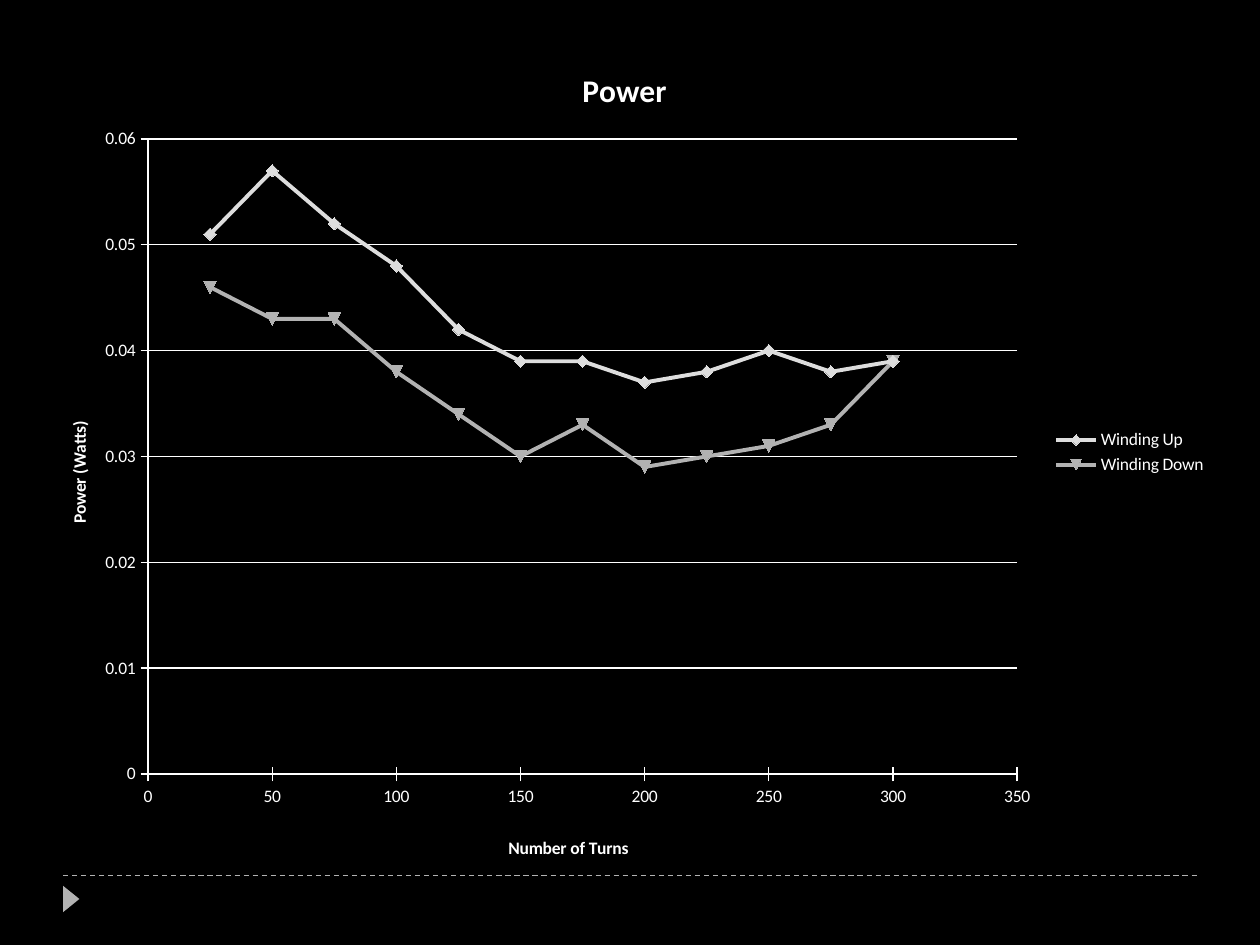
from lxml import etree
from pptx import Presentation
from pptx.chart.data import XyChartData
from pptx.dml.color import RGBColor
from pptx.enum.chart import XL_CHART_TYPE, XL_LEGEND_POSITION, XL_TICK_MARK
from pptx.enum.dml import MSO_LINE
from pptx.enum.shapes import MSO_CONNECTOR, MSO_SHAPE
from pptx.oxml.ns import qn
from pptx.util import Inches, Pt

SCATTER = XL_CHART_TYPE.XY_SCATTER_SMOOTH
LEGEND_RIGHT = XL_LEGEND_POSITION.RIGHT
TICK_CROSS = XL_TICK_MARK.CROSS
TICK_NONE = XL_TICK_MARK.NONE
BLACK = RGBColor(0x00, 0x00, 0x00)
WHITE = RGBColor(0xFF, 0xFF, 0xFF)
LIGHT_GREY = RGBColor(0xDD, 0xDD, 0xDD)
GREY = RGBColor(0xB2, 0xB2, 0xB2)
FONT = "Calibri"

TURNS = range(25, 301, 25)
POWER = {
    "Winding Up": (LIGHT_GREY, [0.051, 0.057, 0.052, 0.048, 0.042, 0.039,
                                0.039, 0.037, 0.038, 0.04, 0.038, 0.039]),
    "Winding Down": (GREY, [0.046, 0.043, 0.043, 0.038, 0.034, 0.03,
                            0.033, 0.029, 0.03, 0.031, 0.033, 0.039]),
}


def set_layout(element, position, **fractions):
    """Place a chart part by fractions of the chart's size."""
    for old in element.findall(qn("c:layout")):
        element.remove(old)
    layout = etree.Element(qn("c:layout"))
    manual = etree.SubElement(layout, qn("c:manualLayout"))
    if "w" in fractions:
        etree.SubElement(manual, qn("c:layoutTarget")).set("val", "inner")
    for side in ("xMode", "yMode"):
        etree.SubElement(manual, qn("c:" + side)).set("val", "edge")
    for name, value in fractions.items():
        etree.SubElement(manual, qn("c:" + name)).set("val", str(value))
    element.insert(position, layout)


def set_title(owner, text, size, x, y):
    """Title a chart or an axis."""
    title = owner.chart_title if hasattr(owner, "chart_title") else owner.axis_title
    title.text_frame.text = text
    font = title.text_frame.paragraphs[0].runs[0].font
    font.name, font.size, font.bold = FONT, Pt(size), True
    font.color.rgb = WHITE
    set_layout(title._element, 1, x=x, y=y)


def style_line(line, color, width):
    line.color.rgb = color
    line.width = Pt(width)


def style_axis(axis, maximum, step, number_format):
    axis.minimum_scale, axis.maximum_scale = 0, maximum
    axis.major_unit = step
    axis.major_tick_mark, axis.minor_tick_mark = TICK_CROSS, TICK_NONE
    axis.tick_labels.number_format = number_format
    axis.tick_labels.number_format_is_linked = False
    style_line(axis.format.line, WHITE, 0.75)


def style_series(series, color, index):
    # The index picks the automatic marker symbol
    series._element.find(qn("c:idx")).set("val", str(index))
    series.smooth = True
    style_line(series.format.line, color, 2.25)
    series.marker.size = 7
    series.marker.format.fill.solid()
    series.marker.format.fill.fore_color.rgb = color
    style_line(series.marker.format.line, color, 0.75)


def add_power_chart(slide):
    data = XyChartData()
    for name, (_, values) in POWER.items():
        series_data = data.add_series(name)
        for turns, power in zip(TURNS, values):
            series_data.add_data_point(turns, power)
    chart = slide.shapes.add_chart(SCATTER, Inches(0.23), Inches(0.23),
                                   Inches(9.45), Inches(6.72), data).chart
    chart.font.name, chart.font.size = FONT, Pt(10)
    chart.font.color.rgb = WHITE

    # Axes and gridlines
    style_axis(chart.category_axis, 350, 50, "General")
    style_axis(chart.value_axis, 0.06, 0.01, "General")
    chart.category_axis.has_major_gridlines = False
    chart.value_axis.has_major_gridlines = True
    style_line(chart.value_axis.major_gridlines.format.line, WHITE, 0.75)

    # Titles, legend and plot area
    set_title(chart, "Power ", 18, 0.46, 0.04)
    set_title(chart.category_axis, "Number of Turns", 10, 0.4, 0.95)
    set_title(chart.value_axis, "Power (Watts)", 10, 0.03, 0.46)
    chart.has_legend = True
    chart.legend.position = LEGEND_RIGHT
    chart.legend.include_in_layout = False
    plot_area = chart._chartSpace.chart.plotArea
    set_layout(plot_area, 0, x=0.1, y=0.13, w=0.73, h=0.75)

    chart.plots[0].vary_by_categories = False
    for index, series in enumerate(chart.plots[0].series, start=1):
        style_series(series, POWER[series.name][0], index)


def add_footer_rule(slide):
    rule = slide.shapes.add_connector(MSO_CONNECTOR.STRAIGHT, Inches(0.5), Inches(6.95),
                                      Inches(9.5), Inches(6.95))
    style_line(rule.line, GREY, 0.75)
    rule.line.dash_style = MSO_LINE.DASH
    etree.SubElement(rule._element.spPr, qn("a:effectLst"))


def add_footer_arrow(slide):
    arrow = slide.shapes.add_shape(MSO_SHAPE.ISOSCELES_TRIANGLE, Inches(0.46), Inches(7.07),
                                   Inches(0.21), Inches(0.13))
    arrow.rotation = 90
    arrow.shadow.inherit = False
    arrow.fill.solid()
    arrow.fill.fore_color.rgb = GREY
    arrow.line.fill.background()


def main():
    presentation = Presentation()
    presentation.slide_width, presentation.slide_height = Inches(10), Inches(7.5)
    slide = presentation.slides.add_slide(presentation.slide_layouts[6])
    slide.background.fill.solid()
    slide.background.fill.fore_color.rgb = BLACK
    add_footer_rule(slide)
    add_footer_arrow(slide)
    add_power_chart(slide)
    presentation.save("out.pptx")


if __name__ == "__main__":
    main()
